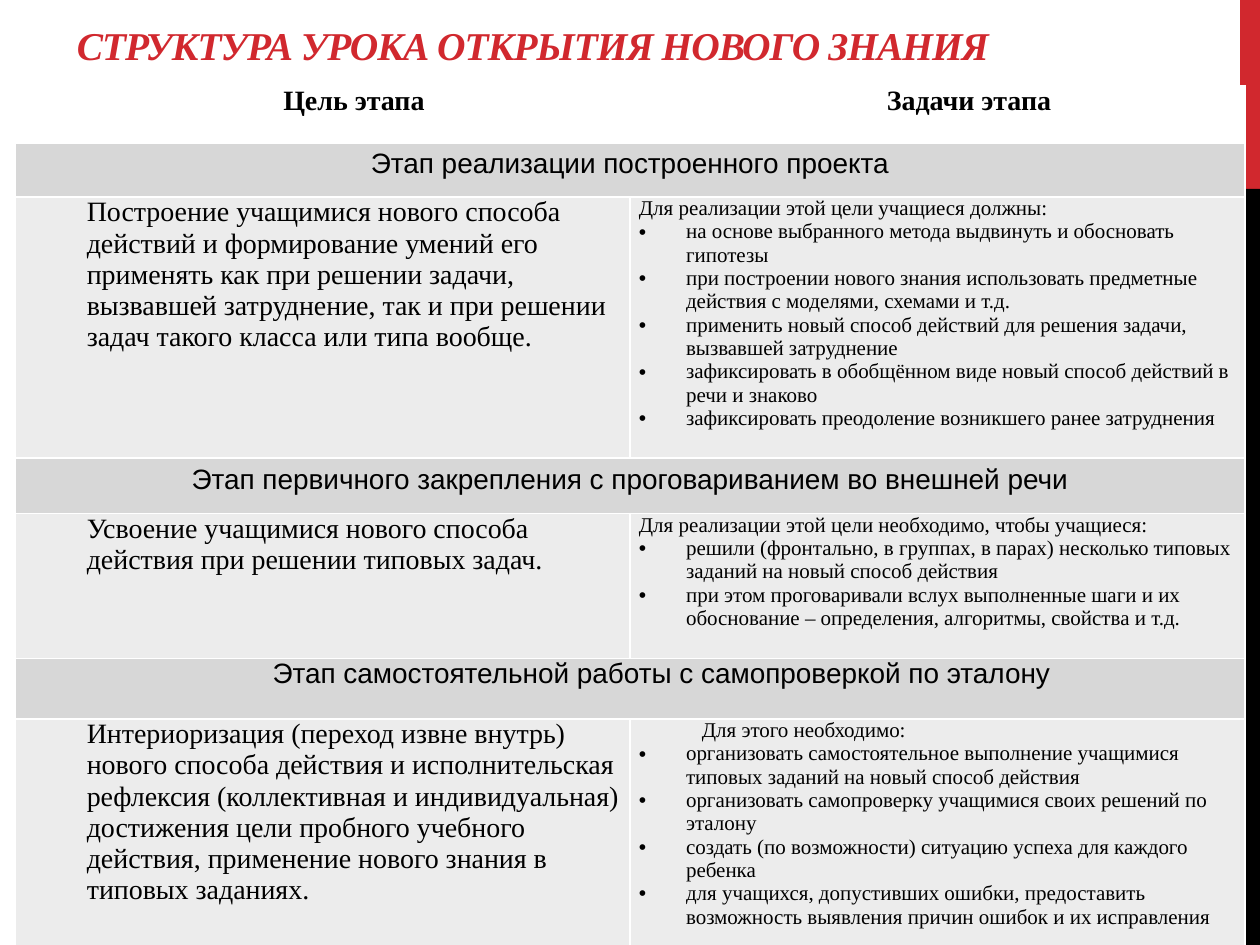
import lxml.etree
import pptx
import pptx.dml.color
import pptx.enum.shapes
import pptx.enum.text
import pptx.oxml.ns
import pptx.util

Cm = pptx.util.Cm
Pt = pptx.util.Pt
qn = pptx.oxml.ns.qn
RGBColor = pptx.dml.color.RGBColor
CENTER = pptx.enum.text.PP_ALIGN.CENTER
LEFT = pptx.enum.text.PP_ALIGN.LEFT

RED = RGBColor(0xD1, 0x28, 0x2E)
BLACK = RGBColor(0, 0, 0)
WHITE = RGBColor(0xFF, 0xFF, 0xFF)
STAGE_GREY = RGBColor(0xD7, 0xD7, 0xD7)
BODY_GREY = RGBColor(0xEC, 0xEC, 0xEC)

SERIF, SANS = "Times New Roman", "Arial"
TITLE_FONT = {"name": SERIF, "size": Pt(22.5), "bold": True, "italic": True}
HEADER_FONT = {"name": SERIF, "size": Pt(16), "bold": True}
STAGE_FONT = {"name": SANS, "size": Pt(16), "bold": False}
GOAL_FONT = {"name": SERIF, "size": Pt(16), "bold": False}
TASK_FONT = {"name": SERIF, "size": Pt(12), "bold": False}

TIGHT_MARGINS = {"margin_left": Cm(0.18), "margin_right": Cm(0.18),
                 "margin_top": 0, "margin_bottom": 0}
DEFAULT_MARGINS = {"margin_left": Cm(0.25), "margin_right": Cm(0.25),
                   "margin_top": Cm(0.13), "margin_bottom": Cm(0.13)}
TEXT_INDENT = Cm(1.27)
BULLET_INDENT = Cm(0.95)

TITLE = "СТРУКТУРА УРОКА ОТКРЫТИЯ НОВОГО ЗНАНИЯ"
HEADERS = ["Цель этапа", "Задачи этапа"]
ROW_HEIGHTS = [1.12, 1.12, 5.26, 1.12, 2.92, 1.22, 4.09]
STAGES = [
    {"name": "Этап реализации построенного проекта",
     "name_indent": 0, "name_margins": DEFAULT_MARGINS,
     "goal": "Построение учащимися нового способа действий и формирование умений "
             "его применять как при решении задачи, вызвавшей затруднение, так и "
             "при решении задач такого класса или типа вообще.",
     "lead": "Для реализации этой цели учащиеся должны:", "lead_indent": 0,
     "tasks": [
         "на основе выбранного метода выдвинуть и обосновать гипотезы",
         "при построении нового знания использовать предметные действия с "
         "моделями, схемами и т.д.",
         "применить новый способ действий для решения задачи, вызвавшей затруднение",
         "зафиксировать в обобщённом виде новый способ действий в речи и знаково",
         "зафиксировать преодоление возникшего ранее затруднения"]},
    {"name": "Этап первичного закрепления с проговариванием во внешней речи",
     "name_indent": 0, "name_margins": DEFAULT_MARGINS,
     "goal": "Усвоение учащимися нового способа действия при решении типовых задач.",
     "lead": "Для реализации этой цели необходимо, чтобы учащиеся:", "lead_indent": 0,
     "tasks": [
         "решили (фронтально, в группах, в парах) несколько типовых заданий на "
         "новый способ действия",
         "при этом проговаривали вслух выполненные шаги и их обоснование – "
         "определения, алгоритмы, свойства и т.д."]},
    {"name": "Этап самостоятельной работы с самопроверкой по эталону",
     "name_indent": TEXT_INDENT, "name_margins": TIGHT_MARGINS,
     "goal": "Интериоризация (переход извне внутрь) нового способа действия и "
             "исполнительская рефлексия (коллективная и индивидуальная) достижения "
             "цели пробного учебного действия, применение нового знания в типовых "
             "заданиях.",
     "lead": "Для этого необходимо:", "lead_indent": TEXT_INDENT,
     "tasks": [
         "организовать самостоятельное выполнение учащимися типовых заданий на "
         "новый способ действия",
         "организовать самопроверку учащимися своих решений по эталону",
         "создать (по возможности) ситуацию успеха для каждого ребенка",
         "для учащихся, допустивших ошибки, предоставить возможность выявления "
         "причин ошибок и их исправления"]},
]


def apply_format(target, values):
    for attribute, value in values.items():
        setattr(target, attribute, value)


def write_paragraph(paragraph, text, font, color=BLACK, align=LEFT, indent=0, bullet=False):
    paragraph.alignment = align
    run = paragraph.add_run()
    run.text = text
    apply_format(run.font, font)
    run.font.color.rgb = color
    properties = paragraph._p.get_or_add_pPr()
    properties.set("marL", str(int(indent)))
    properties.set("indent", str(-int(indent) if bullet else 0))
    if bullet:
        lxml.etree.SubElement(properties, qn("a:buFont")).set("typeface", SANS)
        lxml.etree.SubElement(properties, qn("a:buChar")).set("char", "•")
    return run


def format_cell(cell, fill, margins, top=1, bottom=1):
    """Set margins, white borders (widths in points) and fill."""
    apply_format(cell, margins)
    properties = cell._tc.get_or_add_tcPr()
    for side, width in {"lnL": 1, "lnR": 1, "lnT": top, "lnB": bottom}.items():
        line = lxml.etree.SubElement(properties, qn(f"a:{side}"), w=str(int(Pt(width))))
        line_fill = lxml.etree.SubElement(line, qn("a:solidFill"))
        lxml.etree.SubElement(line_fill, qn("a:srgbClr"), val=str(WHITE))
    cell.fill.solid()
    cell.fill.fore_color.rgb = fill


def add_side_bar(slide, left, top, width, height):
    red_height = height / 5
    parts = [(RED, top, red_height), (BLACK, top + red_height, height - red_height)]
    for color, part_top, part_height in parts:
        bar = slide.shapes.add_shape(pptx.enum.shapes.MSO_SHAPE.RECTANGLE,
                                     Cm(left), Cm(part_top), Cm(width), Cm(part_height))
        bar.shadow.inherit = False
        bar.fill.solid()
        bar.fill.fore_color.rgb = color
        bar.line.fill.background()


def add_title(slide, left, top, width, height):
    frame = slide.shapes.add_textbox(Cm(left), Cm(top), Cm(width), Cm(height)).text_frame
    apply_format(frame, {"word_wrap": True,
                         "vertical_anchor": pptx.enum.text.MSO_ANCHOR.BOTTOM})
    run = write_paragraph(frame.paragraphs[0], TITLE, TITLE_FONT, RED)
    run._r.get_or_add_rPr().set("spc", "-60")


def fill_stage(table, row, stage):
    """Fill the merged heading row of a stage and the goal and tasks below it."""
    heading = table.cell(row, 0)
    heading.merge(table.cell(row, 1))
    for column in range(2):
        format_cell(table.cell(row, column), STAGE_GREY, stage["name_margins"],
                    top=3 if row == 1 else 1)
        format_cell(table.cell(row + 1, column), BODY_GREY, TIGHT_MARGINS)
    write_paragraph(heading.text_frame.paragraphs[0], stage["name"], STAGE_FONT,
                    align=CENTER, indent=stage["name_indent"])
    goal, tasks = (table.cell(row + 1, column).text_frame for column in range(2))
    write_paragraph(goal.paragraphs[0], stage["goal"], GOAL_FONT, indent=TEXT_INDENT)
    write_paragraph(tasks.paragraphs[0], stage["lead"], TASK_FONT,
                    indent=stage["lead_indent"])
    for task in stage["tasks"]:
        write_paragraph(tasks.add_paragraph(), task, TASK_FONT,
                        indent=BULLET_INDENT, bullet=True)


def add_stage_table(slide, left, top, width):
    table = slide.shapes.add_table(len(ROW_HEIGHTS), len(HEADERS), Cm(left), Cm(top),
                                   Cm(width), Cm(sum(ROW_HEIGHTS))).table
    apply_format(table, {"first_row": False, "horz_banding": False})
    for row, height in zip(table.rows, ROW_HEIGHTS):
        row.height = Cm(height)
    for column, header in enumerate(HEADERS):
        table.columns[column].width = Cm(width / len(HEADERS))
        cell = table.cell(0, column)
        format_cell(cell, WHITE, TIGHT_MARGINS, bottom=3)
        write_paragraph(cell.text_frame.paragraphs[0], header, HEADER_FONT,
                        align=CENTER, indent=TEXT_INDENT)
    for number, stage in enumerate(STAGES):
        fill_stage(table, 1 + 2 * number, stage)


def main():
    presentation = pptx.Presentation()
    apply_format(presentation, {"slide_width": Cm(25.4), "slide_height": Cm(19.05)})
    slide = presentation.slides.add_slide(presentation.slide_layouts[6])
    add_side_bar(slide, 25, 0, 0.4, 19.05)
    add_title(slide, 1.3, 0.33, 22.86, 1.17)
    add_stage_table(slide, 0.3, 1.73, 24.8)
    presentation.save("out.pptx")


if __name__ == "__main__":
    main()
